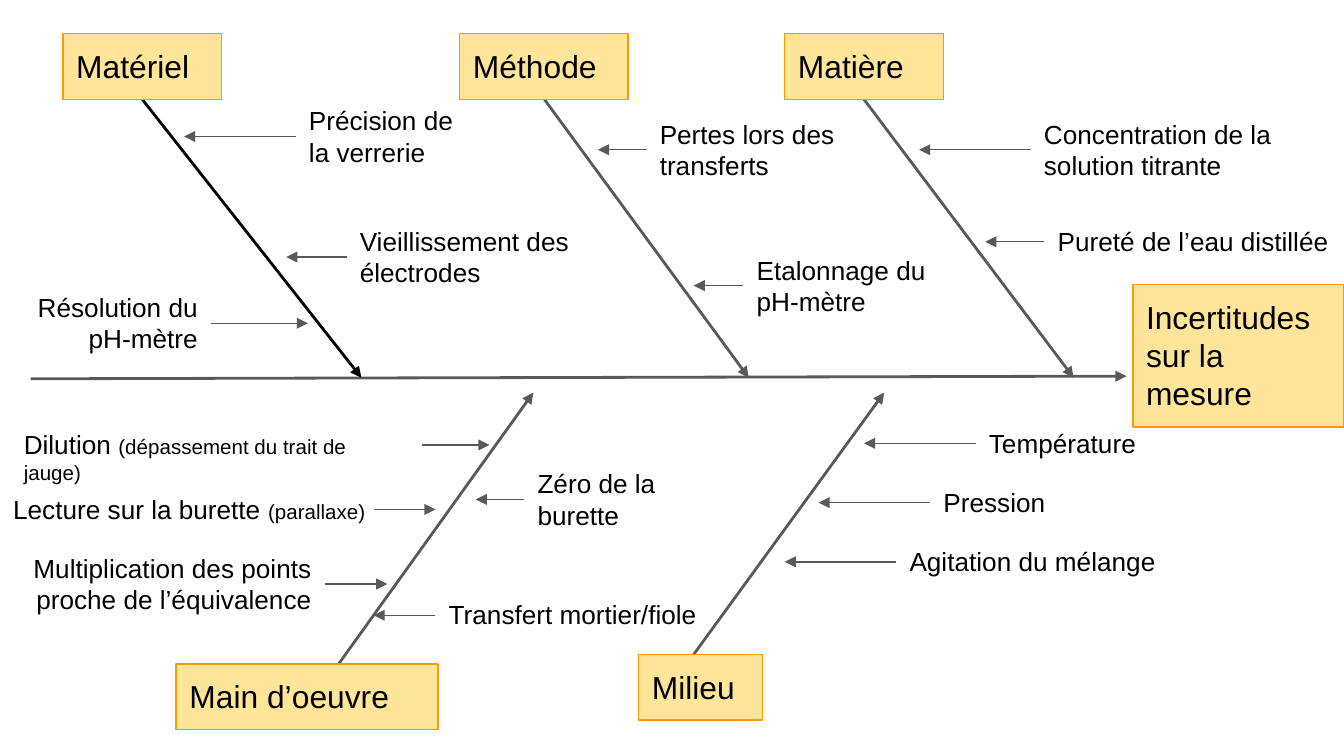
"""Fishbone diagram of the sources of measurement uncertainty."""
from lxml import etree
from pptx import Presentation
from pptx.dml.color import RGBColor
from pptx.enum import shapes, text
from pptx.oxml import ns
from pptx.util import Cm, Pt

COLORS = {"box": "FFE599", "edge": "FF9900", "arrow": "595959", "ink": "000000"}
FONT = "Arial"
INSET = Cm(0.25)
BOX_H = 1.24
LINE_H = {1: 1.12, 2: 1.7}
TOP_BONE_END, BOTTOM_BONE_END = 7.14, 7.42

SPINE = (0.58, 7.16, 21.29, 7.11)
EFFECT = ("Incertitudes sur la mesure", (21.41, 5.38, 3.99, 2.69))

# name, left, top, width, bone start x, bone end x, bone colour
CATEGORIES = [
    ("Matériel", 1.19, 0.64, 3.0, 2.69, 6.83, "ink"),
    ("Méthode", 8.69, 0.64, 3.18, 10.29, 14.15, "arrow"),
    ("Matière", 14.83, 0.64, 3.0, 16.33, 20.29, "arrow"),
    ("Main d’oeuvre", 3.33, 12.55, 4.95, 6.4, 10.08, "arrow"),
    ("Milieu", 12.07, 12.37, 2.34, 13.11, 16.71, "arrow"),
]

# text, small text, left, top, width, lines, arrow tip x
RIGHT_CAUSES = [
    ("Précision de la verrerie", "", 5.59, 1.73, 3.61, 2, 3.48),
    ("Vieillissement des électrodes", "", 6.55, 4.01, 5.28, 2, 5.41),
    ("Pertes lors des transferts", "", 12.22, 1.98, 4.72, 2, 11.3),
    ("Etalonnage du pH-mètre", "", 14.05, 4.55, 4.55, 2, 13.11),
    ("Concentration de la solution titrante", "", 19.48, 1.98, 5.66, 2, 17.37),
    ("Pureté de l’eau distillée", "", 19.74, 4.01, 5.66, 1, 18.62),
    ("Zéro de la burette", "", 9.91, 8.59, 3.61, 2, 8.99),
    ("Transfert mortier/fiole", "", 8.23, 11.07, 5.94, 1, 7.06),
    ("Température", "", 18.44, 7.82, 3.61, 1, 16.33),
    ("Pression", "", 17.58, 8.94, 3.61, 1, 15.47),
    ("Agitation du mélange", "", 16.94, 10.06, 5.49, 1, 14.83),
]
# the same, then arrow start x and alignment
LEFT_CAUSES = [
    ("Résolution du pH-mètre", "", 0, 5.26, 3.99, 2, 5.82, 3.99, "RIGHT"),
    ("Dilution ", "(dépassement du trait de jauge)", 0.2, 7.85, 7.77, 1, 9.25, 7.97, "LEFT"),
    ("Lecture sur la burette ", "(parallaxe)", 0, 9.07, 7.77, 1, 8.23, 7.06, "LEFT"),
    ("Multiplication des points proche de l’équivalence", "", 0.2, 10.19, 5.94, 2,
     7.32, 6.14, "RIGHT"),
]


def rgb(name):
    return RGBColor.from_string(COLORS[name])


def add_arrow(s, x1, y1, x2, y2, color="arrow", width=0.75):
    c = s.shapes.add_connector(shapes.MSO_CONNECTOR.STRAIGHT, Cm(x1), Cm(y1), Cm(x2), Cm(y2))
    c.line.color.rgb = rgb(color)
    c.line.width = Pt(width)
    etree.SubElement(c.line._get_or_add_ln(), ns.qn("a:tailEnd"), type="triangle")
    etree.SubElement(c._element.spPr, ns.qn("a:effectLst"))


def add_text(s, content, at, small="", size=14, align="LEFT", boxed=False):
    at = [Cm(v) for v in at]
    if boxed:
        sp = s.shapes.add_shape(shapes.MSO_SHAPE.RECTANGLE, *at)
        sp.shadow.inherit = False
        sp.fill.solid()
        sp.fill.fore_color.rgb = rgb("box")
        sp.line.color.rgb = rgb("edge")
        sp.line.width = Pt(0.75)
    else:
        sp = s.shapes.add_textbox(*at)
    tf = sp.text_frame
    tf.word_wrap = True
    tf.auto_size = text.MSO_AUTO_SIZE.SHAPE_TO_FIT_TEXT
    tf.vertical_anchor = text.MSO_ANCHOR.TOP
    tf.margin_left = tf.margin_right = tf.margin_top = tf.margin_bottom = INSET
    p = tf.paragraphs[0]
    p.alignment = text.PP_ALIGN[align]
    for part, pt in ((content, size), (small, 11)):
        if part:
            r = p.add_run()
            r.text = part
            r.font.name = FONT
            r.font.size = Pt(pt)
            r.font.color.rgb = rgb("ink")


def main():
    prs = Presentation()
    prs.slide_width, prs.slide_height = Cm(25.4), Cm(14.29)
    s = prs.slides.add_slide(prs.slide_layouts[6])

    add_arrow(s, *SPINE, width=1.5)
    for name, left, top, width, x1, x2, color in CATEGORIES:
        above = top < SPINE[1]
        y1, y2 = (top + BOX_H, TOP_BONE_END) if above else (top, BOTTOM_BONE_END)
        add_arrow(s, x1, y1, x2, y2, color=color, width=1.5)
        add_text(s, name, (left, top, width, BOX_H), size=17, boxed=True)

    causes = [(*cause, cause[2], "LEFT") for cause in RIGHT_CAUSES] + LEFT_CAUSES
    for label, small, left, top, width, lines, tip, start, align in causes:
        height = LINE_H[lines]
        middle = top + height / 2
        add_arrow(s, start, middle, tip, middle)
        add_text(s, label, (left, top, width, height), small=small, align=align)

    add_text(s, EFFECT[0], EFFECT[1], size=17, boxed=True)
    prs.save("out.pptx")


if __name__ == "__main__":
    main()
